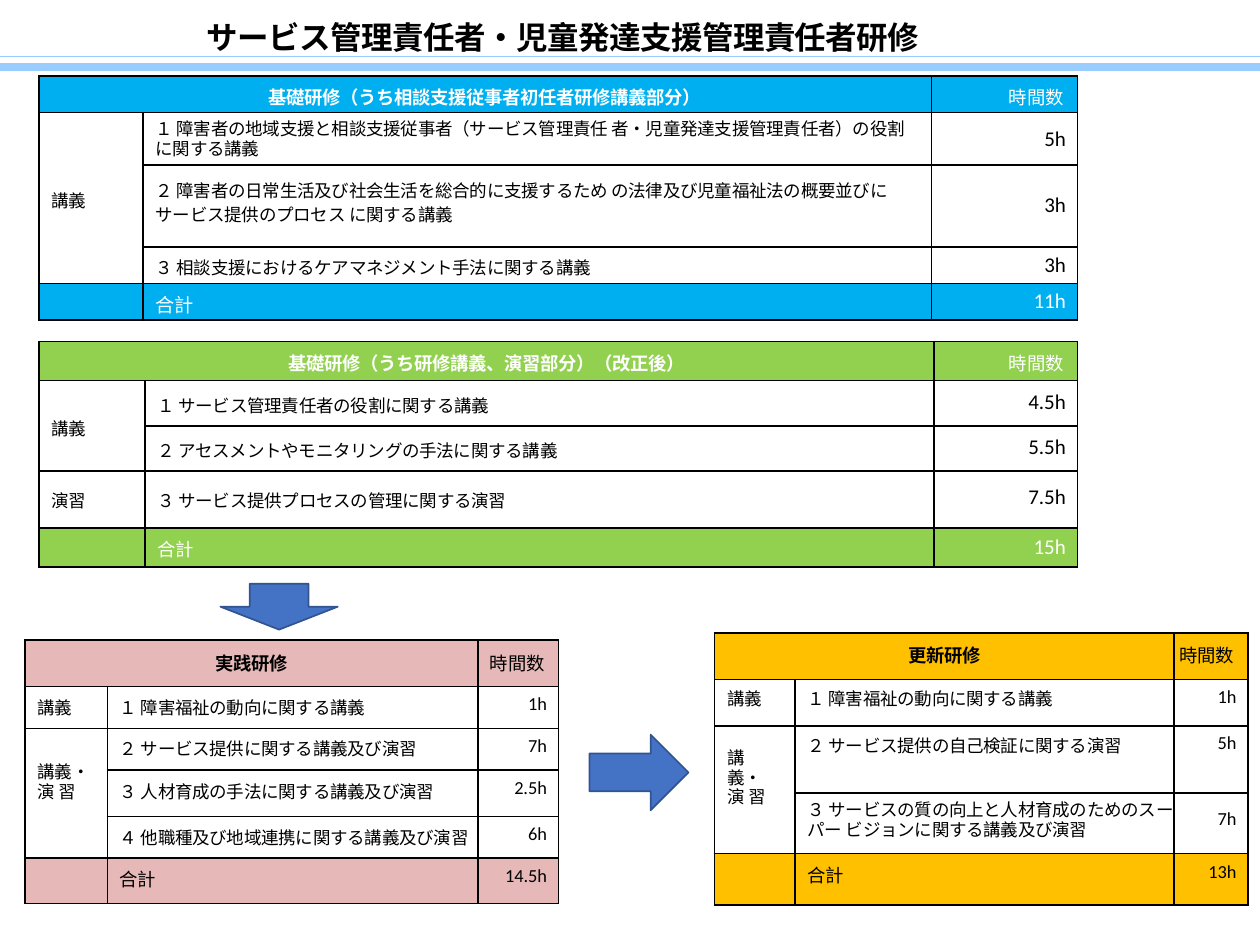
from lxml import etree
from pptx import Presentation
from pptx import util as u
from pptx.dml.color import RGBColor
from pptx.enum import shapes, text
from pptx.oxml.ns import qn

COLORS = {"blue": "00AFEF", "green": "92D050", "pink": "E6B8B8", "amber": "FFC000",
          "white": "FFFFFF", "black": "000000", "rule": "99CCFF",
          "arrow": "4472C4", "arrow edge": "325491"}
JAPANESE, LATIN = "Noto Sans CJK JP", "Calibri"
INDENT = 7.2
TIGHT = 11.3
TITLE = "サービス管理責任者・児童発達支援管理責任者研修"

# Header: text, top margin. Labels: first row, row span, text, top margin, right margin.
# Rows: text, top margin, hours, top margin, then line spacing if the text wraps.
COURSES = [
    {"place": (22.3, 43.3), "fill": "blue", "ink": "white", "sizes": (11, 12),
     "columns": (59.5, 450.5, 83.5), "heights": (20.9, 30.2, 46.8, 20.9, 20.9),
     "header": ("基礎研修（うち相談支援従事者初任者研修講義部分）", 4.3),
     "labels": [(1, 3, "講義", 43, 0)],
     "rows": [("１ 障害者の地域支援と相談支援従事者（サービス管理責任 者・児童発達支援管理責任者）の役割に関する講義", 5, "5h", 7.9, u.Pt(TIGHT)),
              ("２ 障害者の日常生活及び社会生活を総合的に支援するため の法律及び児童福祉法の概要並びにサービス提供のプロセス に関する講義", 7.2, "3h", 15.5, 0.97),
              ("３ 相談支援におけるケアマネジメント手法に関する講義", 4.3, "3h", 2.9),
              ("合計", 3.6, "11h", 2.9)]},
    {"place": (22.3, 195.2), "fill": "green", "ink": "white", "sizes": (10.5, 12),
     "columns": (60.5, 451, 82), "heights": (22.3, 25.9, 25.9, 32.4, 22.3),
     "header": ("基礎研修（うち研修講義、演習部分）（改正後）", 4.3),
     "labels": [(1, 2, "講義", 19.7, 0), (3, 1, "演習", 9.4, 0)],
     "rows": [("１ サービス管理責任者の役割に関する講義", 6.5, "4.5h", 5),
              ("２ アセスメントやモニタリングの手法に関する講義", 6.5, "5.5h", 5),
              ("３ サービス提供プロセスの管理に関する演習", 9.4, "7.5h", 7.9),
              ("合計", 4.3, "15h", 3.6)]},
    {"place": (14.3, 365.8), "fill": "pink", "ink": "black", "sizes": (10.5, 10.5),
     "columns": (47, 212, 46), "heights": (26.6, 23.8, 23.8, 26.6, 23.8, 25.9),
     "header": ("実践研修", 5),
     "labels": [(1, 1, "講義", 4.3, 0), (2, 3, "講義・演 習", 20.5, 5)],
     "rows": [("１ 障害福祉の動向に関する講義", 4.3, "1h", 3.6),
              ("２ サービス提供に関する講義及び演習", 4.3, "7h", 3.6),
              ("３ 人材育成の手法に関する講義及び演習", 5, "2.5h", 4.3),
              ("４ 他職種及び地域連携に関する講義及び演習", 4.3, "6h", 3.6),
              ("合計", 4.3, "14.5h", 4.3)]},
    {"place": (408.3, 361.7), "fill": "amber", "ink": "black", "sizes": (10.5, 10.5),
     "columns": (46, 216.5, 42.5), "heights": (26.6, 26.6, 38.2, 34.6, 29.5),
     "header": ("更新研修", 5),
     "labels": [(1, 1, "講義", 3.6, 0), (2, 2, "講義・演 習", 13.5, 14)],
     "rows": [("１ 障害福祉の動向に関する講義", 3.6, "1h", 3.6),
              ("２ サービス提供の自己検証に関する演習", 3.6, "5h", 3.6),
              ("３ サービスの質の向上と人材育成のためのスーパー ビジョンに関する講義及び演習", 5, "7h", 8.6, u.Pt(TIGHT)),
              ("合計", 4.3, "13h", 4.3)]},
]
RULES = [(32.4, 0.72), (38.2, 4.56)]
ARROWS = [(shapes.MSO_SHAPE.DOWN_ARROW, 126, 333.6, 67, 26.2),
          (shapes.MSO_SHAPE.RIGHT_ARROW, 336.9, 419.8, 56.5, 43.2)]


def rgb(name):
    return RGBColor.from_string(COLORS[name])


def write(para, words, size, color="black", bold=False, font=JAPANESE, spacing=-0.1):
    span = para.add_run()
    span.text = words
    span.font.size, span.font.bold, span.font.name = u.Pt(size), bold, font
    span.font.color.rgb = rgb(color)
    props = span.font._element
    props.set("spc", str(round(spacing * 100)))
    etree.SubElement(props, qn("a:ea")).set("typeface", JAPANESE)


def fill_cell(cell, words, size, top, align="LEFT", right=0, line=None, **style):
    cell.margin_top, cell.margin_right = u.Pt(top), u.Pt(right)
    cell.margin_left = u.Pt(INDENT if align == "LEFT" else 0)
    para = cell.text_frame.paragraphs[0]
    para.alignment = getattr(text.PP_ALIGN, align)
    if line:
        para.line_spacing = line
    write(para, words, size, **style)


def prepare_cell(cell, fill):
    cell.margin_left = cell.margin_right = cell.margin_top = cell.margin_bottom = 0
    cell.text_frame.paragraphs[0]._p.get_or_add_endParaRPr().set("sz", "1000")
    props = cell._tc.get_or_add_tcPr()
    for side in ("lnL", "lnR", "lnT", "lnB"):
        border = etree.SubElement(props, qn("a:" + side), w=str(u.Pt(1)))
        ink = etree.SubElement(border, qn("a:solidFill"))
        etree.SubElement(ink, qn("a:srgbClr"), val=COLORS["black"])
    if fill:
        cell.fill.solid()
        cell.fill.fore_color.rgb = rgb(fill)
    else:
        cell.fill.background()


def add_course(slide, course):
    columns, heights = course["columns"], course["heights"]
    bounds = (*course["place"], sum(columns), sum(heights))
    table = slide.shapes.add_table(len(heights), 3, *map(u.Pt, bounds)).table
    table.first_row = table.horz_banding = False
    for column, width in zip(table.columns, columns):
        column.width = u.Pt(width)
    last = len(heights) - 1
    for index, height in enumerate(heights):
        table.rows[index].height = u.Pt(height)
        for cell in table.rows[index].cells:
            prepare_cell(cell, course["fill"] if index in (0, last) else None)

    ink = course["ink"]
    heading, top = course["header"]
    table.cell(0, 0).merge(table.cell(0, 1))
    fill_cell(table.cell(0, 0), heading, 10.5, top, "CENTER", color=ink, bold=True, spacing=-0.15)
    fill_cell(table.cell(0, 2), "時間数", 10.5, top, "RIGHT", 8, color=ink, spacing=0)
    for first, count, words, top, right in course["labels"]:
        cell = table.cell(first, 0)
        if count > 1:
            cell.merge(table.cell(first + count - 1, 0))
        fill_cell(cell, words, 10, top, right=right, line=u.Pt(TIGHT) if right else None)

    total_size, hours_size = course["sizes"]
    for index, (words, top, hours, hours_top, *line) in enumerate(course["rows"], 1):
        total = index == last
        color = ink if total else "black"
        wide = line and course["fill"] == "blue"
        fill_cell(table.cell(index, 1), words, total_size if total else 10, top,
                  right=14 if wide else 0, line=line[0] if line else None, color=color)
        fill_cell(table.cell(index, 2), hours, hours_size, hours_top, "RIGHT", 6.7,
                  color=color, font=LATIN, spacing=0)


def main():
    deck = Presentation()
    deck.slide_width, deck.slide_height = u.Pt(720), u.Pt(540)
    slide = deck.slides.add_slide(deck.slide_layouts[6])

    box = slide.shapes.add_textbox(*map(u.Pt, (117.4, 8.6, 424, 23.8)))
    frame = box.text_frame
    frame.word_wrap = True
    frame.vertical_anchor = text.MSO_ANCHOR.MIDDLE
    frame.margin_left = frame.margin_top = u.Pt(0.7)
    frame.margin_right = frame.margin_bottom = 0
    write(frame.paragraphs[0], TITLE, 18, bold=True, spacing=-0.3)

    for y, width in RULES:
        rule = slide.shapes.add_connector(shapes.MSO_CONNECTOR.STRAIGHT, 0, u.Pt(y), u.Pt(720), u.Pt(y))
        rule.line.color.rgb, rule.line.width = rgb("rule"), u.Pt(width)
        etree.SubElement(rule._element.spPr, qn("a:effectLst"))

    for course in COURSES:
        add_course(slide, course)

    for kind, *bounds in ARROWS:
        arrow = slide.shapes.add_shape(kind, *map(u.Pt, bounds))
        arrow.shadow.inherit = False
        arrow.fill.solid()
        arrow.fill.fore_color.rgb = rgb("arrow")
        arrow.line.color.rgb, arrow.line.width = rgb("arrow edge"), u.Pt(1)

    deck.save("out.pptx")


if __name__ == "__main__":
    main()
